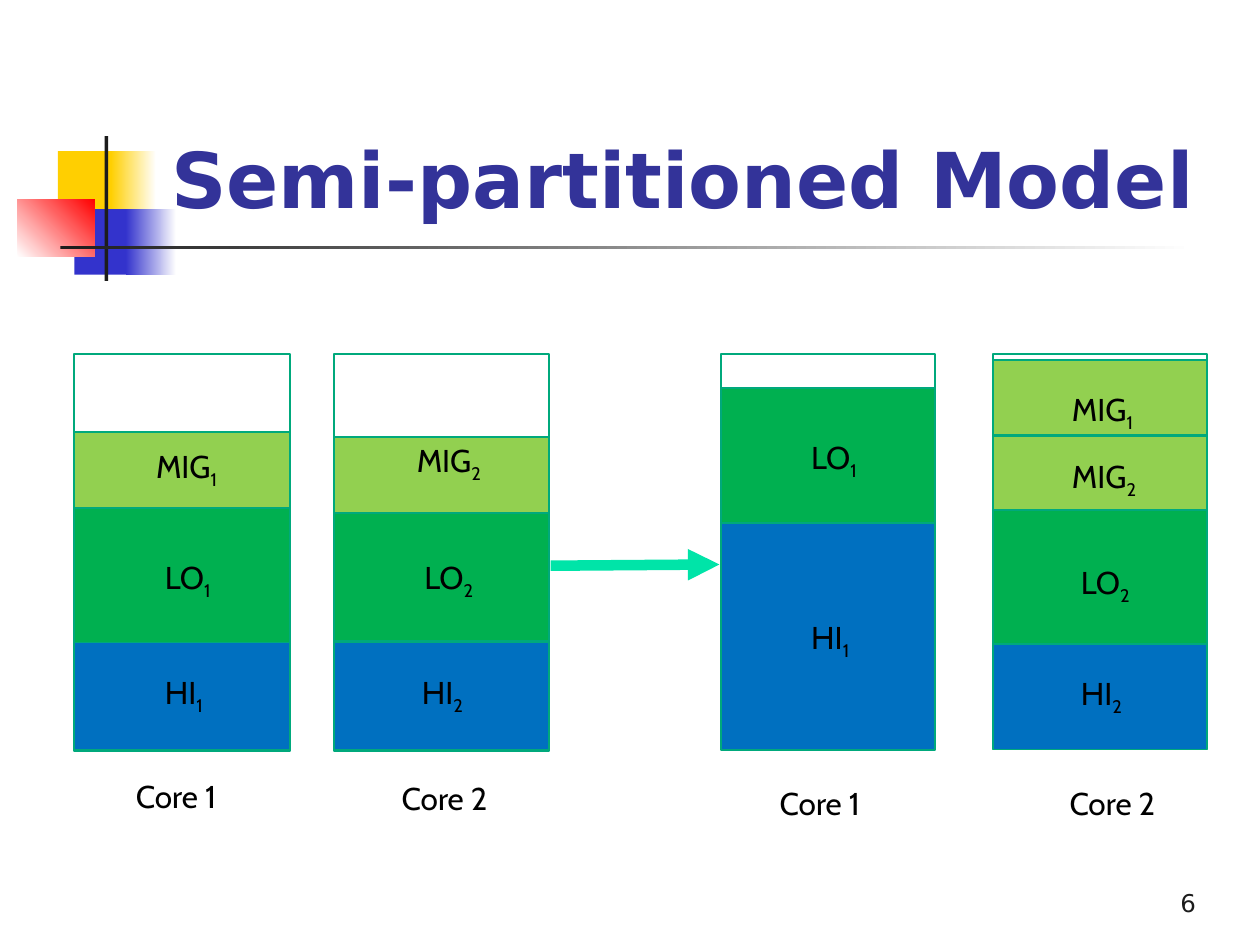
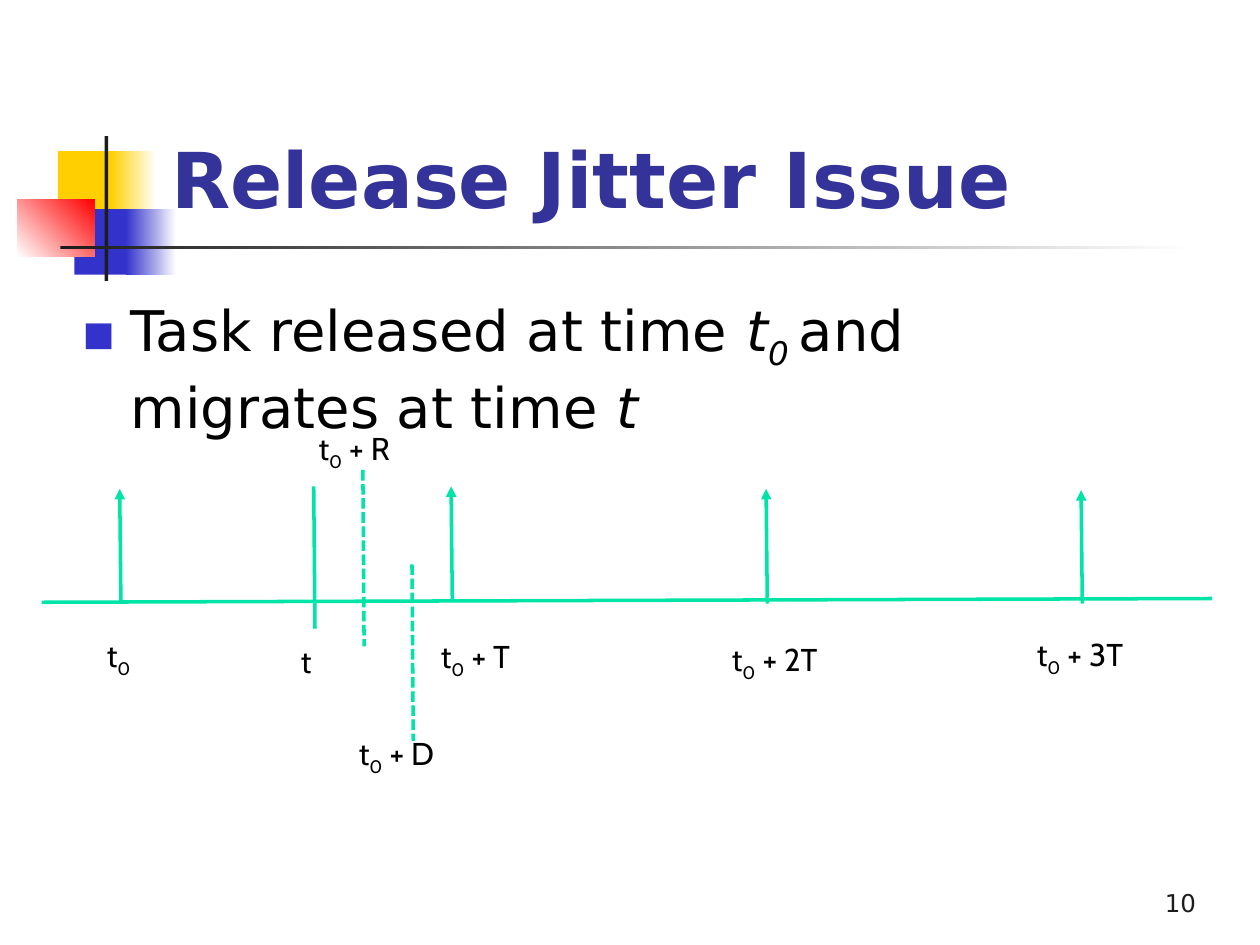
from pptx import Presentation
from pptx.dml.color import RGBColor
from pptx.enum.dml import MSO_LINE
from pptx.enum.shapes import MSO_CONNECTOR, MSO_SHAPE
from pptx.enum.text import MSO_ANCHOR, PP_ALIGN
from pptx.oxml.ns import qn
from pptx.util import Inches, Pt
from lxml.etree import SubElement

WHITE = RGBColor(0xFF, 0xFF, 0xFF)
BLACK = RGBColor(0x00, 0x00, 0x00)
DARK = RGBColor(0x1C, 0x1C, 0x1C)
NAVY = RGBColor(0x33, 0x33, 0x99)
INDIGO = RGBColor(0x33, 0x33, 0xCC)
YELLOW = RGBColor(0xFF, 0xCF, 0x01)
RED = RGBColor(0xFF, 0x00, 0x00)
BLUE = RGBColor(0x00, 0x70, 0xC0)
GREEN = RGBColor(0x00, 0xB0, 0x50)
LIME = RGBColor(0x92, 0xD0, 0x50)
EDGE = RGBColor(0x00, 0xA9, 0x7C)
MINT = RGBColor(0x00, 0xE4, 0xA8)

FILLS = {"HI": BLUE, "LO": GREEN, "MIG": LIME}


class Deck:
    font = "Cabin"
    main = "DejaVu Sans"

    def __init__(self):
        self.prs = Presentation()
        self.prs.slide_width = Inches(10)
        self.prs.slide_height = Inches(7.5)

    def start(self, title, number):
        self.slide = self.prs.slides.add_slide(self.prs.slide_layouts[6])
        self.rect(0.46, 1.2, 0.48, 0.52, YELLOW)
        self.fade(0.88, 1.2, 0.36, 0.52, YELLOW, WHITE)
        self.rect(0.59, 1.66, 0.46, 0.52, INDIGO)
        self.fade(1, 1.66, 0.4, 0.52, INDIGO, WHITE)
        self.fade(0.14, 1.58, 0.61, 0.46, WHITE, RED, 45)
        self.rect(0.83, 1.08, 0.03, 1.15, DARK)
        self.fade(0.48, 1.95, 9, 0.03, DARK, WHITE)
        head = self.text(1.26, 0.23, 8.52, 1.6, title, 44, NAVY, self.main, MSO_ANCHOR.BOTTOM)
        head.runs[0].font.bold = True
        foot = self.text(8.47, 6.83, 1.12, 0.5, number, 14, DARK, self.main, MSO_ANCHOR.BOTTOM)
        foot.alignment = PP_ALIGN.RIGHT

    def rect(self, x, y, w, h, fill=None, edge=None):
        box = self.slide.shapes.add_shape(
            MSO_SHAPE.RECTANGLE, Inches(x), Inches(y), Inches(w), Inches(h))
        box.shadow.inherit = False
        if fill is None:
            box.fill.background()
        else:
            box.fill.solid()
            box.fill.fore_color.rgb = fill
        if edge is None:
            box.line.fill.background()
        else:
            box.line.color.rgb = edge
            box.line.width = Pt(1)
        return box

    def fade(self, x, y, w, h, first, last, angle=0):
        fill = self.rect(x, y, w, h).fill
        fill.gradient()
        fill.gradient_angle = angle
        for stop, color in zip(fill.gradient_stops, (first, last)):
            stop.color.rgb = color

    def text(self, x, y, w, h, words, size=18, color=BLACK, font=None, anchor=MSO_ANCHOR.TOP):
        box = self.slide.shapes.add_textbox(Inches(x), Inches(y), Inches(w), Inches(h))
        frame = box.text_frame
        frame.word_wrap = True
        frame.vertical_anchor = anchor
        para = frame.paragraphs[0]
        for part in words.split("|"):
            run = para.add_run()
            run.text = part.lstrip("*_")
            run.font.size = Pt(size)
            run.font.name = font or self.font
            run.font.color.rgb = color
            if part.startswith("*"):
                run.font.italic = True
            if part.lstrip("*").startswith("_"):
                run.font._element.set("baseline", "-25000")
        return para

    def bullet(self, x, y, w, h, words):
        para = self.text(x, y, w, h, words, 32, BLACK, self.main)
        props = para._p.get_or_add_pPr()
        props.set("marL", str(Inches(0.38)))
        props.set("indent", str(Inches(-0.38)))
        tint = SubElement(props, qn("a:buClr"))
        SubElement(tint, qn("a:srgbClr"), val=str(INDIGO))
        SubElement(props, qn("a:buSzPct"), val="60000")
        SubElement(props, qn("a:buFont"), typeface=self.main)
        SubElement(props, qn("a:buChar"), char="■")

    def line(self, x1, y1, x2, y2, width=2, arrow=False, dash=False):
        line = self.slide.shapes.add_connector(
            MSO_CONNECTOR.STRAIGHT, Inches(x1), Inches(y1), Inches(x2), Inches(y2))
        line.line.color.rgb = MINT
        line.line.width = Pt(width)
        if dash:
            line.line.dash_style = MSO_LINE.SQUARE_DOT
        if arrow:
            SubElement(line.line._get_or_add_ln(), qn("a:tailEnd"), type="triangle")
        SubElement(line._element.spPr, qn("a:effectLst"))

    def core(self, x, w, h, name, spot, tasks):
        self.rect(x, 2.81, w, h, None, EDGE)
        for task, top, high, left, mid in tasks:
            self.rect(x, top, w, high, FILLS[task.split("|")[0]], EDGE)
            self.text(left, mid, 0.8, 0.4, task)
        self.text(*spot, 0.96, 0.4, name)


def model(deck):
    deck.start("Semi-partitioned Model", "6")
    deck.core(0.59, 1.71, 3.15, "Core 1", (0.98, 6.12), [
        ("HI|_1", 5.1, 0.85, 1.21, 5.29),
        ("LO|_1", 4.02, 1.08, 1.21, 4.38),
        ("MIG|_1", 3.43, 0.6, 1.14, 3.5)])
    deck.core(2.65, 1.71, 3.15, "Core 2", (3.09, 6.13), [
        ("HI|_2", 5.1, 0.85, 3.25, 5.29),
        ("LO|_2", 4.01, 1.08, 3.27, 4.38),
        ("MIG|_2", 3.47, 0.6, 3.21, 3.45)])
    deck.line(4.37, 4.49, 5.71, 4.48, 6, arrow=True)
    deck.core(5.72, 1.7, 3.11, "Core 1", (6.09, 6.17), [
        ("HI|_1", 4.14, 1.81, 6.34, 4.86),
        ("LO|_1", 3.08, 1.07, 6.34, 3.43)])
    deck.core(7.88, 1.7, 3.11, "Core 2", (8.39, 6.17), [
        ("MIG|_1", 2.86, 0.59, 8.41, 3.05),
        ("MIG|_2", 3.46, 0.59, 8.41, 3.58),
        ("LO|_2", 4.05, 1.07, 8.48, 4.42),
        ("HI|_2", 5.11, 0.84, 8.48, 5.3)])


def jitter(deck):
    deck.start("Release Jitter Issue", "10")
    deck.bullet(0.56, 2.3, 8.5, 4.5, "Task released at time |*t|*_0 |and migrates at time |*t")
    deck.line(0.33, 4.78, 9.62, 4.75)
    for x, low, high in [(0.95, 4.79, 3.88), (3.58, 4.76, 3.86),
                         (6.08, 4.79, 3.88), (8.58, 4.79, 3.89)]:
        deck.line(x + 0.01, low, x, high, arrow=True)
    deck.line(2.49, 3.86, 2.5, 4.99)
    for x, y in [(3.27, 4.48), (2.88, 3.73)]:
        deck.line(x, y, x + 0.01, y + 1.4, dash=True)
    for x, y, w, words in [
            (0.75, 5, 0.46, "t|_0"), (2.29, 5.05, 0.46, "t"),
            (3.4, 5.01, 0.89, "t|_0| + T"), (5.71, 5.03, 1.03, "t|_0| + 2T"),
            (8.13, 4.99, 1.12, "t|_0| + 3T"), (2.75, 5.78, 0.97, "t|_0| + D"),
            (2.43, 3.36, 0.97, "t|_0| + R")]:
        deck.text(x, y, w, 0.4, words)


def main():
    deck = Deck()
    model(deck)
    jitter(deck)
    deck.prs.save("out.pptx")


if __name__ == "__main__":
    main()
